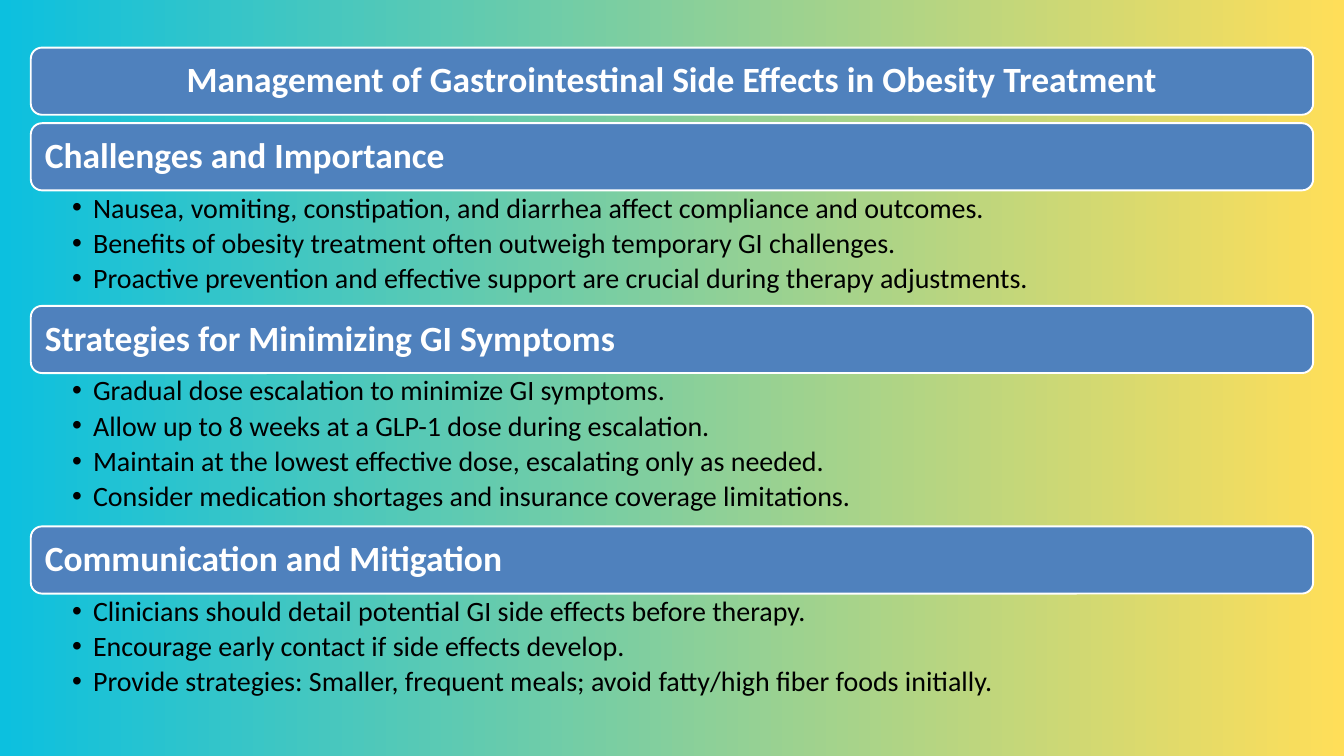
from dataclasses import dataclass

from lxml import etree
from pptx import Presentation
from pptx.dml.color import RGBColor
from pptx.enum.shapes import MSO_SHAPE
from pptx.enum.text import MSO_ANCHOR, MSO_AUTO_SIZE, PP_ALIGN
from pptx.oxml.ns import qn
from pptx.util import Emu, Pt

ROUND = MSO_SHAPE.ROUNDED_RECTANGLE
TOP, MIDDLE = MSO_ANCHOR.TOP, MSO_ANCHOR.MIDDLE
LEFT, CENTER = PP_ALIGN.LEFT, PP_ALIGN.CENTER
NO_FIT = MSO_AUTO_SIZE.NONE

# Content
TITLE = "Management of Gastrointestinal Side Effects in Obesity Treatment"
PARTS = [
    ("Challenges and Importance", [
        "Nausea, vomiting, constipation, and diarrhea affect compliance and outcomes.",
        "Benefits of obesity treatment often outweigh temporary GI challenges.",
        "Proactive prevention and effective support are crucial during therapy adjustments.",
    ]),
    ("Strategies for Minimizing GI Symptoms", [
        "Gradual dose escalation to minimize GI symptoms.",
        "Allow up to 8 weeks at a GLP-1 dose during escalation.",
        "Maintain at the lowest effective dose, escalating only as needed.",
        "Consider medication shortages and insurance coverage limitations.",
    ]),
    ("Communication and Mitigation", [
        "Clinicians should detail potential GI side effects before therapy.",
        "Encourage early contact if side effects develop.",
        "Provide strategies: Smaller, frequent meals; avoid fatty/high fiber foods initially.",
    ]),
]


@dataclass(frozen=True)
class Theme:
    font: str = "Calibri"
    head: int = 38
    body: int = 30
    edge: int = 2
    bar: str = "4F81BD"
    light: str = "FFFFFF"
    dark: str = "000000"
    fade: tuple = ("0CC0DF", "FFDE59")


THEME = Theme()

# Layout in px, 96 to the inch
WIDE, HIGH = 1920, 1080
SIDE, START = 44, 68
SPAN, BAR = 1832, 96
GAP, INSET = 12, 5
ROW, REST = 54, 3
HANG = 30
HEAD_PAD = (15, 15, 15, 15)
LIST_PAD = (59, 5, 29, 5)


def px(n):
    return Emu(n * 9525)


def rgb(code):
    return RGBColor.from_string(code)


def place(shape, x, y, w, h):
    shape.left, shape.top, shape.width, shape.height = map(px, (x, y, w, h))


def add_bullet(para):
    para.level = 1
    props = para._p.get_or_add_pPr()
    props.set("marL", str(px(HANG)))
    props.set("indent", str(px(-HANG)))
    etree.SubElement(props, qn("a:buFont"), typeface="Arial")
    etree.SubElement(props, qn("a:buChar"), char="•")


def write(shape, lines, size=THEME.head, color=THEME.light, bold=True,
          align=LEFT, anchor=MIDDLE, pad=HEAD_PAD, after=0, bullet=False):
    frame = shape.text_frame
    frame.word_wrap = True
    frame.auto_size = NO_FIT
    frame.vertical_anchor = anchor
    (frame.margin_left, frame.margin_top,
     frame.margin_right, frame.margin_bottom) = map(px, pad)
    frame.text = "\n".join(lines)
    for para in frame.paragraphs:
        para.alignment = align
        para.line_spacing = 0.9
        para.space_after = Pt(after)
        if bullet:
            add_bullet(para)
        font = para.runs[0].font
        font.name, font.size, font.bold = THEME.font, Pt(size), bold
        font.color.rgb = rgb(color)


def add_bar(shapes, y):
    bar = shapes.add_shape(ROUND, px(SIDE), px(y), px(SPAN), px(BAR))
    bar.shadow.inherit = False
    bar.fill.solid()
    bar.fill.fore_color.rgb = rgb(THEME.bar)
    bar.line.color.rgb = rgb(THEME.light)
    bar.line.width = Pt(THEME.edge)
    return bar


def add_box(shapes):
    return shapes.add_textbox(0, 0, 0, 0)


def set_head(box, y, text, **style):
    place(box, SIDE + INSET, y + INSET, SPAN - 2 * INSET, BAR - 2 * INSET)
    write(box, [text], **style)


def main():
    deck = Presentation()
    deck.slide_width, deck.slide_height = px(WIDE), px(HIGH)
    slide = deck.slides.add_slide(deck.slide_layouts[5])
    shapes = slide.shapes

    # Background fade, left to right
    fill = slide.background.fill
    fill.gradient()
    fill.gradient_angle = 0
    for stop, spot, code in zip(fill.gradient_stops, (0, 1), THEME.fade):
        stop.position = spot
        stop.color.rgb = rgb(code)

    # Title, raised above its bar
    y = START
    title = shapes.title
    add_bar(shapes, y).element.addnext(title.element)
    set_head(title, y, TITLE, align=CENTER)
    y += BAR + GAP

    # Headings, each with its list below
    for head, points in PARTS:
        add_bar(shapes, y)
        set_head(add_box(shapes), y, head)
        y += BAR
        tall = REST + ROW * len(points)
        body = add_box(shapes)
        place(body, SIDE, y, SPAN, tall)
        write(body, points, size=THEME.body, color=THEME.dark, bold=False,
              anchor=TOP, pad=LIST_PAD, after=5.4, bullet=True)
        y += tall

    deck.save("out.pptx")


if __name__ == "__main__":
    main()
